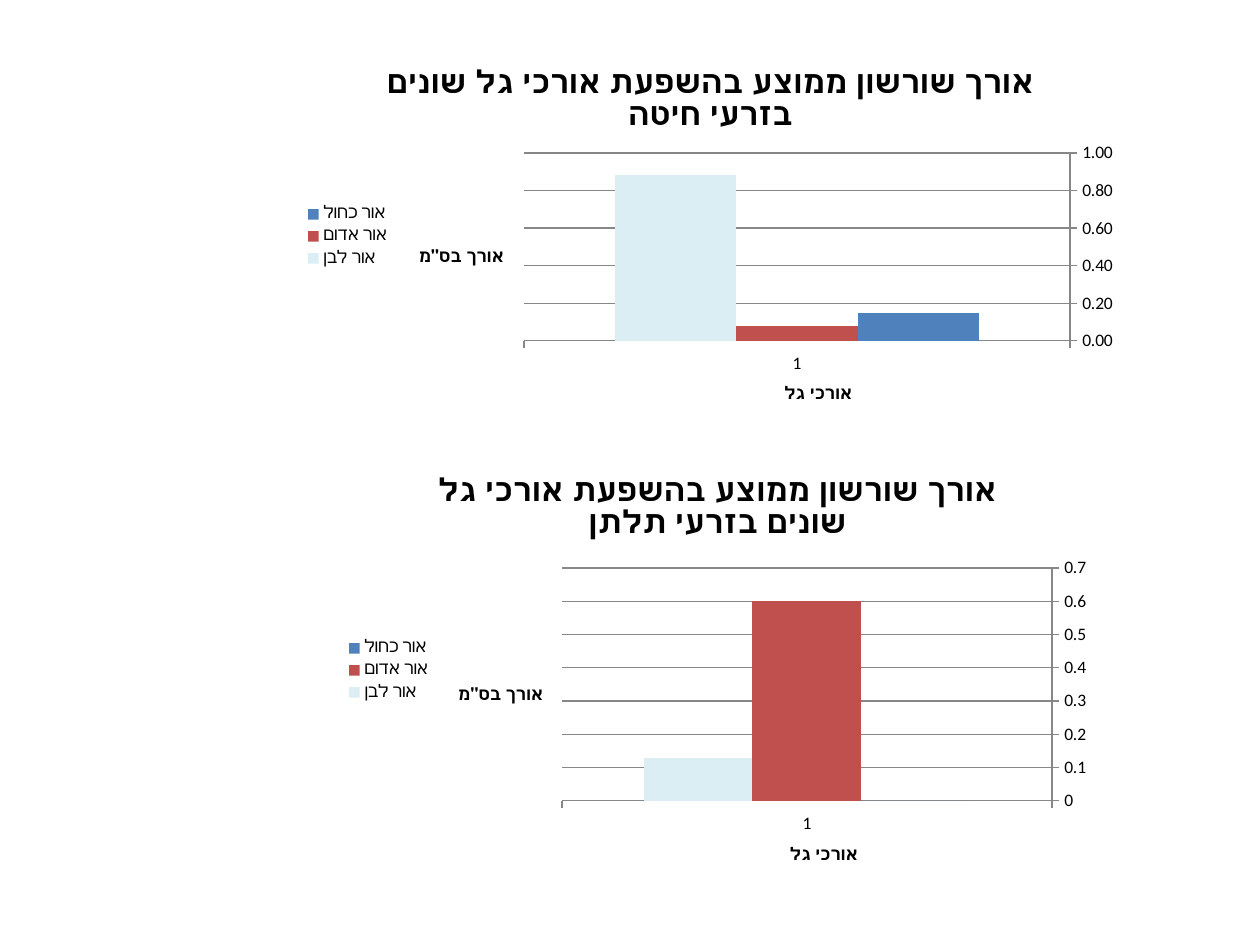
from lxml.etree import SubElement
from pptx import Presentation
from pptx.chart.data import CategoryChartData
from pptx.dml.color import RGBColor
from pptx.enum.chart import XL_CHART_TYPE, XL_LEGEND_POSITION, XL_TICK_MARK
from pptx.oxml.ns import qn
from pptx.util import Pt

EMU_PER_PX = 914400 / 126
LIGHTS = {"אור כחול": "4F81BD", "אור אדום": "C0504D", "אור לבן": "DBEEF4"}


def px(length):
    return round(length * EMU_PER_PX)


def color(value):
    return RGBColor.from_string(value)


class GrowthSlide:
    font_name = "Calibri"
    text_color = "000000"
    line_color = "878787"
    text_size = 10
    title_size = 18

    def __init__(self, presentation):
        self.slide = presentation.slides.add_slide(presentation.slide_layouts[6])

    def style_font(self, font, size, bold=False):
        settings = {"name": self.font_name, "size": Pt(size), "bold": bold}
        for attribute, value in settings.items():
            setattr(font, attribute, value)
        font.color.rgb = color(self.text_color)

    def title(self, owner, text, size):
        frame = owner.text_frame
        frame.text = text
        self.style_font(frame.paragraphs[0].runs[0].font, size, True)
        return frame

    def line(self, line_format):
        line_format.color.rgb = color(self.line_color)
        line_format.width = Pt(0.75)

    def axis(self, axis, text, settings):
        for attribute, value in settings.items():
            setattr(axis, attribute, value)
        axis.major_tick_mark = XL_TICK_MARK.OUTSIDE
        axis.minor_tick_mark = XL_TICK_MARK.NONE
        self.line(axis.format.line)
        self.style_font(axis.tick_labels.font, self.text_size)
        return self.title(axis.axis_title, text, self.text_size)

    def plot_layout(self, chart, frame_box, plot_box):
        left, top, width, height = frame_box
        plot_left, plot_top, plot_width, plot_height = plot_box
        area = chart._chartSpace.chart.plotArea
        for old in area.findall(qn("c:layout")):
            area.remove(old)
        layout = SubElement(area, qn("c:layout"))
        area.insert(0, layout)
        manual = SubElement(layout, qn("c:manualLayout"))
        values = {
            "layoutTarget": "inner", "xMode": "edge", "yMode": "edge",
            "x": (plot_left - left) / width, "y": (plot_top - top) / height,
            "w": plot_width / width, "h": plot_height / height,
        }
        for tag, value in values.items():
            SubElement(manual, qn(f"c:{tag}")).set("val", str(value))

    def column_chart(self, heading, lengths, frame_box, plot_box, maximum, step, number_format):
        data = CategoryChartData(number_format=number_format)
        data.categories = ["1"]
        for light, length in zip(LIGHTS, lengths):
            data.add_series(light, [length])
        chart = self.slide.shapes.add_chart(
            XL_CHART_TYPE.COLUMN_CLUSTERED, *map(px, frame_box), data
        ).chart
        self.style_font(chart.font, self.text_size)
        self.title(chart.chart_title, heading, self.title_size)
        chart.chart_title.include_text_frame = True

        chart.has_legend = True
        chart.legend.position = XL_LEGEND_POSITION.LEFT
        chart.legend.include_in_layout = False
        self.style_font(chart.legend.font, self.text_size)

        plot = chart.plots[0]
        plot.gap_width = 150
        plot.vary_by_categories = False
        for series, fill in zip(plot.series, LIGHTS.values()):
            series.format.fill.solid()
            series.format.fill.fore_color.rgb = color(fill)

        self.axis(chart.category_axis, "אורכי גל", {"reverse_order": True})
        length_title = self.axis(chart.value_axis, 'אורך בס"מ', {
            "minimum_scale": 0, "maximum_scale": maximum,
            "major_unit": step, "has_major_gridlines": True,
        })
        body = length_title._txBody.bodyPr
        for attribute, value in {"rot": "0", "vert": "horz"}.items():
            body.set(attribute, value)
        self.line(chart.value_axis.major_gridlines.format.line)
        labels = chart.value_axis.tick_labels
        labels.number_format = number_format
        labels.number_format_is_linked = False
        self.plot_layout(chart, frame_box, plot_box)


def main():
    presentation = Presentation()
    presentation.slide_width = px(1260)
    presentation.slide_height = px(945)
    growth = GrowthSlide(presentation)
    heading = "אורך שורשון ממוצע בהשפעת אורכי גל שונים בזרעי "
    growth.column_chart(
        heading + "חיטה", [0.15, 0.08, 0.88],
        (292, 45, 837, 383), (524, 153, 546, 188), 1, 0.2, "0.00",
    )
    growth.column_chart(
        heading + "תלתן", [0, 0.6, 0.13],
        (333, 452, 769, 437), (562, 568, 490, 233), 0.7, 0.1, "General",
    )
    presentation.save("out.pptx")


if __name__ == "__main__":
    main()
